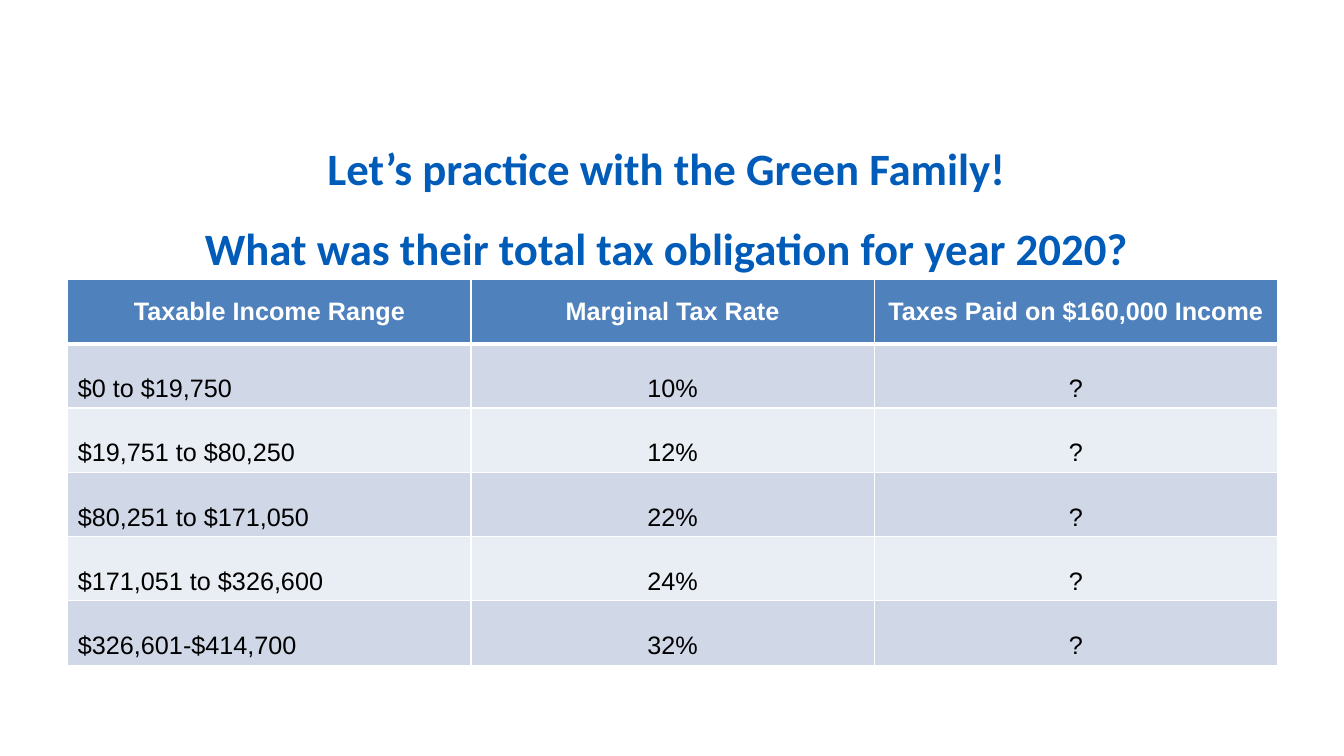
from lxml.etree import SubElement
from pptx import Presentation
from pptx.dml.color import RGBColor
from pptx.enum.text import MSO_ANCHOR, MSO_AUTO_SIZE, PP_ALIGN
from pptx.oxml.ns import qn
from pptx.util import Cm, Pt

COLORS = {
    "title": "005CB8",
    "header": "4F81BD",
    "odd": "D0D8E8",
    "even": "E9EDF4",
    "white": "FFFFFF",
    "black": "000000",
}


def format_font(font, color, values):
    for name, value in values.items():
        setattr(font, name, value)
    font.color.rgb = RGBColor.from_string(COLORS[color])


def add_border(cell, side, width):
    line = SubElement(cell._tc.get_or_add_tcPr(), qn(f"a:ln{side}"), w=str(Pt(width)))
    fill = SubElement(line, qn("a:solidFill"))
    SubElement(fill, qn("a:srgbClr"), val=COLORS["white"])


presentation = Presentation()
presentation.slide_width = Cm(33.87)
presentation.slide_height = Cm(19.05)
slide = presentation.slides.add_slide(presentation.slide_layouts[5])

title = slide.shapes.title
title_box = {"left": Cm(1.69), "top": Cm(2.54), "width": Cm(30.48), "height": Cm(2.74)}
for name, value in title_box.items():
    setattr(title, name, value)
title_frame = {
    "word_wrap": True,
    "auto_size": MSO_AUTO_SIZE.NONE,
    "vertical_anchor": MSO_ANCHOR.MIDDLE,
    "margin_top": Cm(2.13),
}
for name, value in title_frame.items():
    setattr(title.text_frame, name, value)
paragraph = title.text_frame.paragraphs[0]
paragraph.text = "Let’s practice with the Green Family! \vWhat was their total tax obligation for year 2020? "
paragraph.alignment = PP_ALIGN.CENTER
paragraph.line_spacing = Pt(57)
for run in paragraph.runs:
    format_font(run.font, "title", {"name": "Calibri", "size": Pt(32), "bold": True})

rows = [
    ("Taxable Income Range", "Marginal Tax Rate", "Taxes Paid on $160,000 Income"),
    ("$0 to $19,750", "10%", "?"),
    ("$19,751 to $80,250", "12%", "?"),
    ("$80,251 to $171,050", "22%", "?"),
    ("$171,051 to $326,600", "24%", "?"),
    ("$326,601-$414,700", "32%", "?"),
]
table = slide.shapes.add_table(
    len(rows), 3, Cm(1.71), Cm(7.04), Cm(30.48), Cm(1.62) * len(rows)
).table

for row_index, row in enumerate(rows):
    is_header = row_index == 0
    fill_color = "header" if is_header else "odd" if row_index % 2 else "even"
    for column_index, text in enumerate(row):
        cell = table.cell(row_index, column_index)
        for side in "LRTB":
            thick = (is_header and side == "B") or (row_index == 1 and side == "T")
            add_border(cell, side, 3 if thick else 1)
        cell.fill.solid()
        cell.fill.fore_color.rgb = RGBColor.from_string(COLORS[fill_color])
        cell.vertical_anchor = MSO_ANCHOR.MIDDLE if is_header else MSO_ANCHOR.BOTTOM
        cell.text = text
        paragraph = cell.text_frame.paragraphs[0]
        is_range = column_index == 0 and not is_header
        paragraph.alignment = PP_ALIGN.LEFT if is_range else PP_ALIGN.CENTER
        format_font(
            paragraph.runs[0].font,
            "white" if is_header else "black",
            {"name": "Arial", "size": Pt(18), "bold": is_header},
        )

presentation.save("out.pptx")
